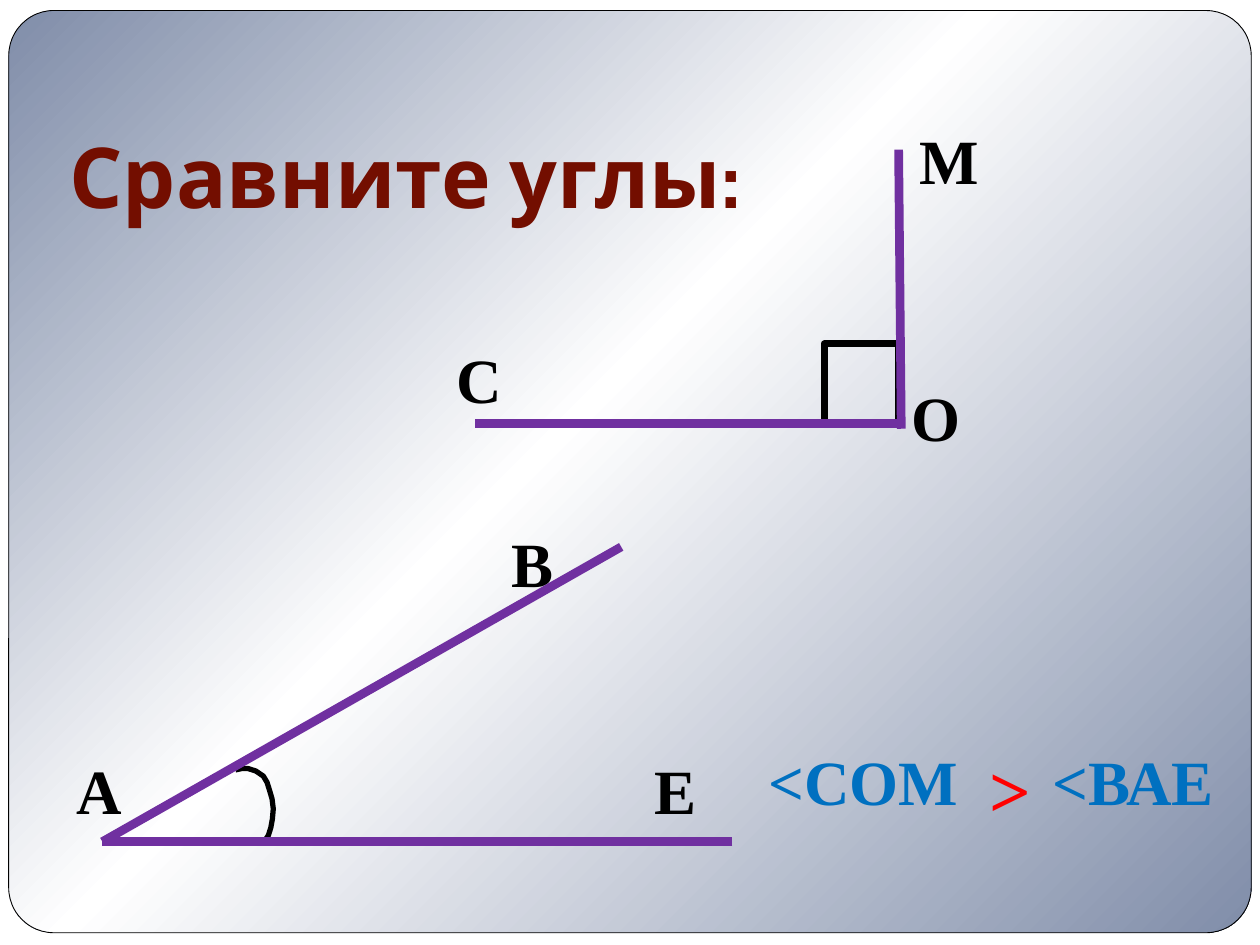
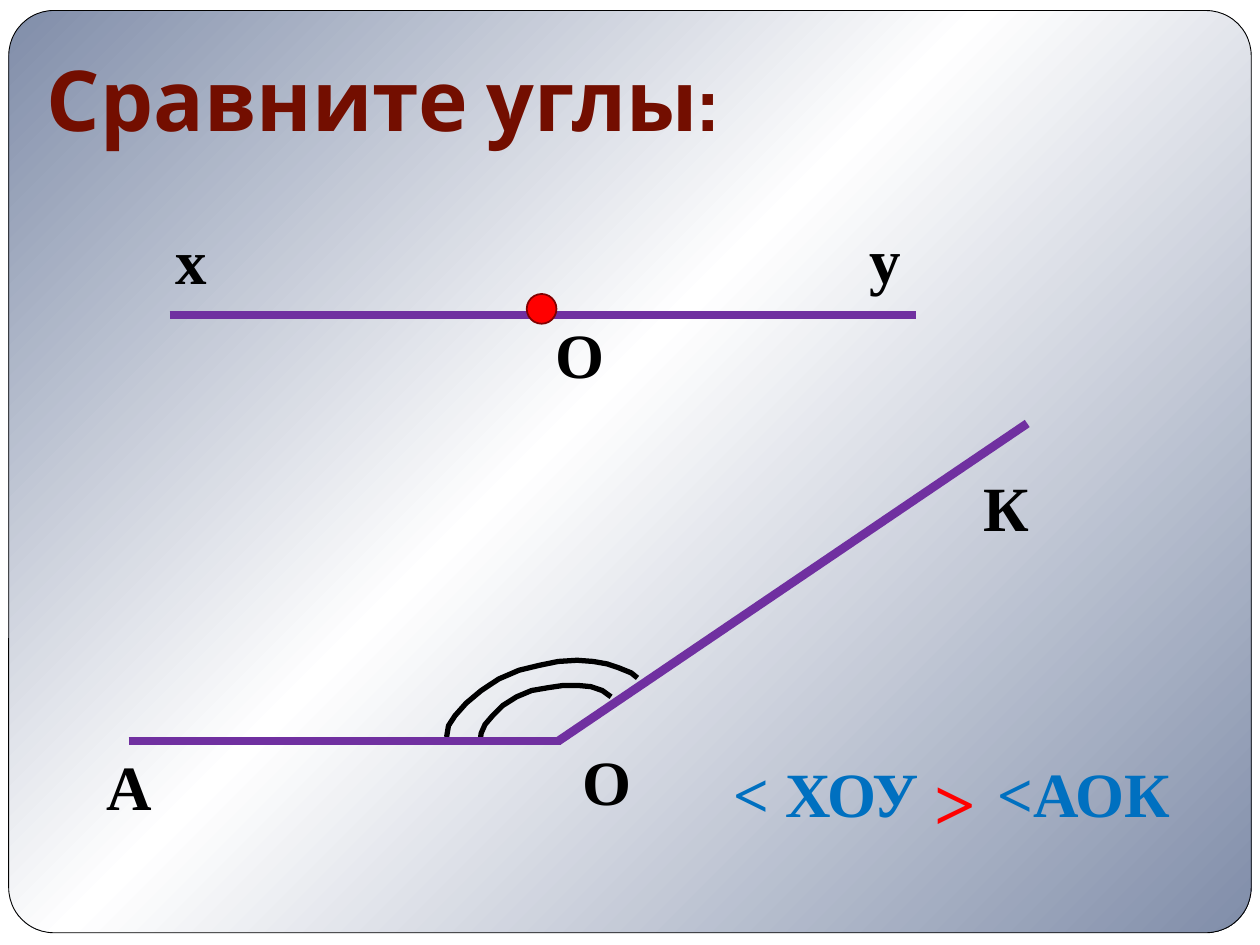
from lxml import etree
from pptx import Presentation
from pptx import util as u
from pptx.dml.color import RGBColor
from pptx.enum import shapes, text
from pptx.oxml import parse_xml
from pptx.oxml.ns import qn

Pt = u.Pt

# Shared style
STEEL = RGBColor(0x80, 0x8D, 0xA9)
WHITE = RGBColor(0xFF, 0xFF, 0xFF)
BLACK = RGBColor(0, 0, 0)
MAROON = RGBColor(0x73, 0x0E, 0x00)
DARK_RED = RGBColor(0x80, 0x01, 0x01)
RED = RGBColor(0xFF, 0, 0)
BLUE = RGBColor(0x00, 0x70, 0xC0)
PURPLE = RGBColor(0x70, 0x30, 0xA0)
TITLE_FONT, TEXT_FONT = "Cabin", "Times New Roman"
TITLE = "Сравните углы:"
TITLE_SIZE, ANSWER_SIZE, LABEL_SIZE = (612, 90), (305, 109), (62.5, 51)
PANEL = (5, 6, 710, 527)
PANEL_STOPS = [(0, STEEL), (45, WHITE), (100, STEEL)]

# Content: positions in points; rays are (x1, y1, x2, y2)
SLIDES = [
    {
        "title_at": (32.5, 46),
        "answer_at": (432, 384.5),
        "answer": ("<СОМ  ", "<ВАЕ"),
        "labels": [("М", 518.5, 66), ("О", 514, 213), ("С", 254, 191),
                   ("В", 285, 296), ("Е", 367, 426), ("А", 36.5, 426)],
        "right_angle": (471, 196.5, 42.5, 45.5),
        "arcs": [
            [(134.6, 440), (138.2, 439.2), (141.8, 439.2), (146.2, 440.6),
             (150.5, 443.5), (152.6, 447), (154, 451.4), (155.5, 456.5),
             (156.2, 462.2), (155.7, 468), (154.8, 473), (153.4, 477.4),
             (152, 479.5)],
        ],
        "rays": [(271.5, 242, 515, 242), (513.5, 85.5, 515, 245),
                 (418.5, 481, 58.5, 481), (355, 312.5, 58.5, 481)],
    },
    {
        "title_at": (19.5, 2),
        "answer_at": (412, 391.5),
        "answer": ("< ХОУ ", "<АОК"),
        "labels": [("К", 555, 264), ("А", 54, 423.5), ("О", 325.5, 421),
                   ("х", 93, 123), ("О", 310.5, 177), ("у", 489.5, 122.5)],
        "arcs": [
            [(274.3, 424), (275, 419), (277.2, 414), (281.5, 409),
             (287.3, 403.2), (295.2, 398.2), (303.8, 394.6), (313.2, 393),
             (321.8, 391.7), (330.5, 391.7), (337.7, 392.4), (344.2, 394.6),
             (349.2, 398.2)],
            [(255.2, 421.2), (256.3, 414.7), (260, 409), (266.4, 401.8),
             (275, 394.6), (285, 388), (296.6, 383), (308.2, 380.2),
             (319, 378), (329.8, 377.3), (339, 378), (347, 379.4),
             (353.5, 381.6), (360.7, 384.5), (364.3, 387.4)],
        ],
        "rays": [(73.5, 423.5, 320.5, 423.5), (587, 242, 319, 423.5),
                 (97, 180, 523.5, 180)],
        "vertex": (301, 168, 17, 17),
    },
]


def points(values):
    return [Pt(value) for value in values]


def place(shape, position, size):
    shape.left, shape.top, shape.width, shape.height = points(position + size)


def style_font(font, size, color, name=TEXT_FONT):
    font.name, font.size, font.bold = name, Pt(size), True
    font.color.rgb = color


def style_outline(shape, color, width, fill=None):
    shape.shadow.inherit = False
    shape.line.color.rgb = color
    shape.line.width = Pt(width)
    if fill is None:
        shape.fill.background()
    else:
        shape.fill.solid()
        shape.fill.fore_color.rgb = fill


def add_panel(page, layout):
    """Put the rounded gradient panel behind everything on the layout."""
    panel = page.shapes.add_shape(shapes.MSO_SHAPE.ROUNDED_RECTANGLE, *points(PANEL))
    panel.adjustments[0] = 0.049
    style_outline(panel, BLACK, 0.5, WHITE)
    panel.fill.gradient()
    panel.fill.gradient_angle = 315
    stop_list = panel._element.spPr.find(qn("a:gradFill")).find(qn("a:gsLst"))
    for stop in list(stop_list):
        stop_list.remove(stop)
    for position, color in PANEL_STOPS:
        stop = etree.SubElement(stop_list, qn("a:gs"), pos=str(position * 1000))
        etree.SubElement(stop, qn("a:srgbClr"), val=str(color))
    layout.shapes[0]._element.addprevious(panel._element)


def add_title(page, position):
    title = page.shapes.title
    place(title, position, TITLE_SIZE)
    frame = title.text_frame
    frame.text = TITLE
    frame.auto_size = text.MSO_AUTO_SIZE.NONE
    frame.vertical_anchor = text.MSO_ANCHOR.BOTTOM
    frame.margin_bottom = Pt(7.2)
    para = frame.paragraphs[0]
    para.alignment = text.PP_ALIGN.LEFT
    style_font(para.font, 48, MAROON, TITLE_FONT)


def add_answer(page, position, left_angle, right_angle):
    body = page.placeholders[1]
    place(body, position, ANSWER_SIZE)
    frame = body.text_frame
    frame.auto_size = text.MSO_AUTO_SIZE.NONE
    para = frame.paragraphs[0]
    properties = para._p.get_or_add_pPr()
    properties.set("marL", "0")
    properties.set("indent", "0")
    etree.SubElement(properties, qn("a:buNone"))
    para.space_before = Pt(0)
    for words, size, color in [(left_angle, 36, BLUE), (">", 72, RED),
                               (" ", 48, BLUE), (right_angle, 36, BLUE)]:
        span = para.add_run()
        span.text = words
        style_font(span.font, size, color)
        if words == ">":
            span.font._element.set("baseline", "-10000")


def add_label(page, letter, left, top):
    box = page.shapes.add_textbox(*points((left, top) + LABEL_SIZE))
    frame = box.text_frame
    frame.word_wrap = True
    frame.auto_size = text.MSO_AUTO_SIZE.SHAPE_TO_FIT_TEXT
    frame.text = letter
    style_font(frame.paragraphs[0].font, 36, BLACK)


def add_arc(page, outline):
    start, *rest = [points(point) for point in outline]
    builder = page.shapes.build_freeform(*start)
    builder.add_line_segments(rest, close=False)
    style_outline(builder.convert_to_shape(), BLACK, 3)


def add_ray(page, ends):
    ray = page.shapes.add_connector(shapes.MSO_CONNECTOR.STRAIGHT, *points(ends))
    ray.line.color.rgb = PURPLE
    ray.line.width = Pt(5)
    etree.SubElement(ray._element.spPr, qn("a:effectLst"))


def main():
    deck = Presentation()
    deck.slide_width, deck.slide_height = Pt(720), Pt(540)
    layout = deck.slide_layouts[1]
    for number, content in enumerate(SLIDES):
        page = deck.slides.add_slide(layout)
        if number == 0:
            add_panel(page, layout)
        add_title(page, content["title_at"])
        add_answer(page, content["answer_at"], *content["answer"])
        for label in content["labels"]:
            add_label(page, *label)

        # Angle marks lie under the rays, the vertex dot above them
        if "right_angle" in content:
            mark = page.shapes.add_shape(shapes.MSO_SHAPE.RECTANGLE,
                                         *points(content["right_angle"]))
            style_outline(mark, BLACK, 4)
        for outline in content["arcs"]:
            add_arc(page, outline)
        for ends in content["rays"]:
            add_ray(page, ends)
        if "vertex" in content:
            dot = page.shapes.add_shape(shapes.MSO_SHAPE.OVAL, *points(content["vertex"]))
            style_outline(dot, DARK_RED, 1, RED)
    deck.save("out.pptx")


if __name__ == "__main__":
    main()
